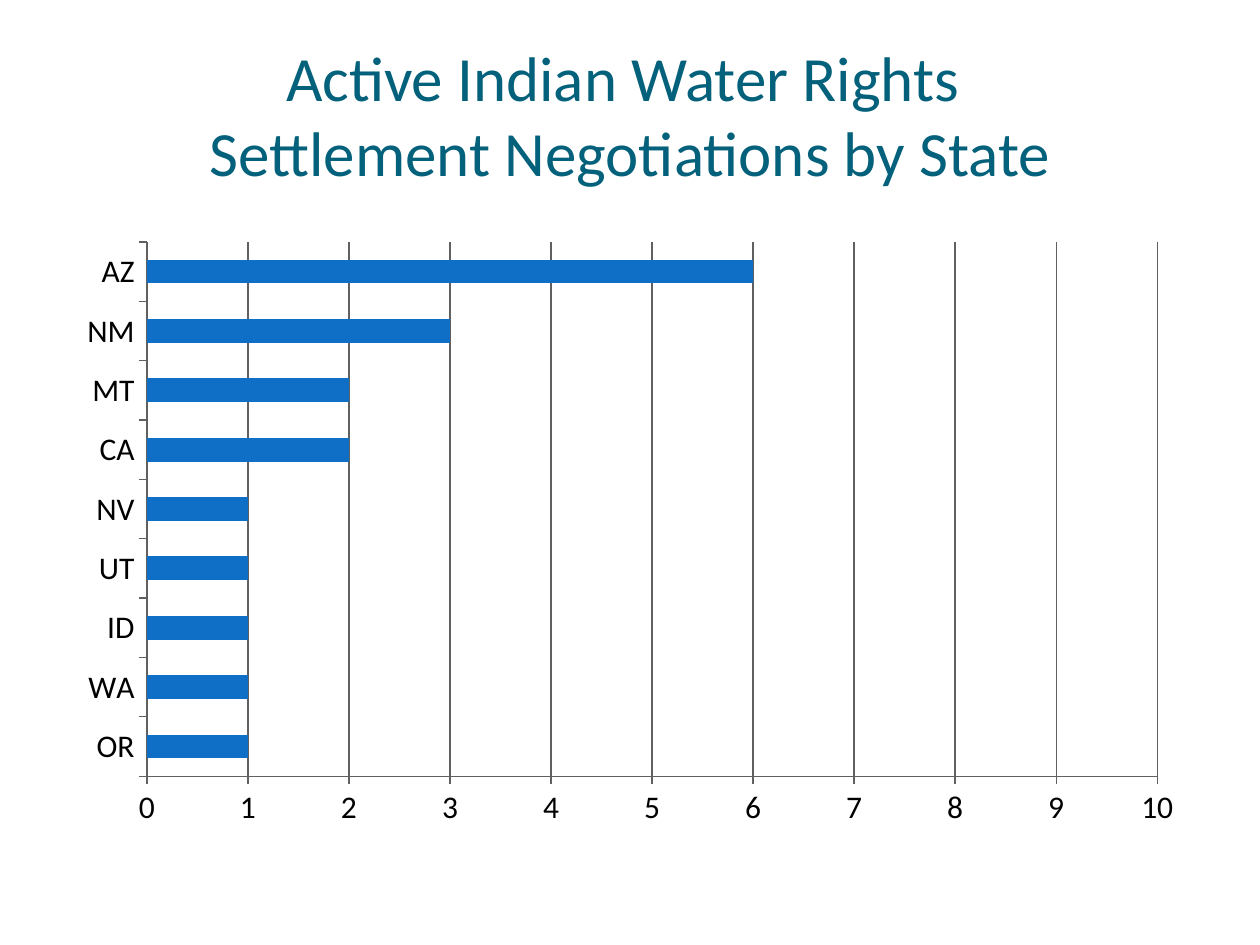
from dataclasses import dataclass

from lxml import etree
from pptx import Presentation
from pptx.chart.data import CategoryChartData
from pptx.dml.color import RGBColor
from pptx.enum.chart import XL_CHART_TYPE, XL_TICK_MARK
from pptx.enum.text import MSO_ANCHOR, MSO_AUTO_SIZE, PP_ALIGN
from pptx.oxml import parse_xml
from pptx.oxml.ns import nsdecls
from pptx.util import Cm, Pt

BARS = XL_CHART_TYPE.BAR_CLUSTERED
OUT, NONE = XL_TICK_MARK.OUTSIDE, XL_TICK_MARK.NONE
BOTTOM = MSO_ANCHOR.BOTTOM
FIXED = MSO_AUTO_SIZE.NONE
CENTER = PP_ALIGN.CENTER

FONT = "Calibri"
COLORS = {"title": "04617B", "bar": "0F6FC6", "text": "000000", "line": "606060"}
PLOT = {"x": 0.074, "y": 0.034, "w": 0.891, "h": 0.857}


@dataclass
class Box:
    left: float
    top: float
    width: float
    height: float

    def lengths(self) -> tuple:
        return Cm(self.left), Cm(self.top), Cm(self.width), Cm(self.height)


@dataclass
class State:
    name: str
    count: int


STATES = [
    State("OR", 1),
    State("WA", 1),
    State("ID", 1),
    State("UT", 1),
    State("NV", 1),
    State("CA", 2),
    State("MT", 2),
    State("NM", 3),
    State("AZ", 6),
]


def color(key: str) -> RGBColor:
    return RGBColor.from_string(COLORS[key])


def style(font, size: float, key: str) -> None:
    font.name = FONT
    font.size = Pt(size)
    font.color.rgb = color(key)


def add_title(slide, box: Box, text: str) -> None:
    title = slide.shapes.title
    title.left, title.top, title.width, title.height = box.lengths()
    frame = title.text_frame
    frame.text = text
    frame.word_wrap = True
    frame.auto_size = FIXED
    frame.vertical_anchor = BOTTOM
    frame.margin_left = frame.margin_right = frame.margin_bottom = 0
    frame.margin_top = Cm(0.13)
    line = frame.paragraphs[0]
    line.alignment = CENTER
    style(line.font, 36, "title")


def style_line(line) -> None:
    line.color.rgb = color("line")
    line.width = Pt(0.75)


def style_axis(axis) -> None:
    axis.major_tick_mark = OUT
    axis.minor_tick_mark = NONE
    style_line(axis.format.line)


def set_plot(chart) -> None:
    area = chart._chartSpace.chart.plotArea
    for old in area.findall("{*}layout"):
        area.remove(old)
    layout = parse_xml(f"<c:layout {nsdecls('c')}><c:manualLayout/></c:layout>")
    tags = {"layoutTarget": "inner", "xMode": "edge", "yMode": "edge", **PLOT}
    space = etree.QName(layout).namespace
    for tag, val in tags.items():
        etree.SubElement(layout[0], f"{{{space}}}{tag}").set("val", str(val))
    area.insert(0, layout)


def add_bars(slide, box: Box, states: list[State]) -> None:
    data = CategoryChartData()
    data.categories = [state.name for state in states]
    data.add_series("Series 1", [state.count for state in states])
    chart = slide.shapes.add_chart(BARS, *box.lengths(), data).chart
    chart.has_legend = False
    chart.has_title = False
    style(chart.font, 18, "text")
    plot = chart.plots[0]
    plot.gap_width = 150
    plot.vary_by_categories = False
    fill = plot.series[0].format.fill
    fill.solid()
    fill.fore_color.rgb = color("bar")
    scale = chart.value_axis
    for axis in (chart.category_axis, scale):
        style_axis(axis)
    scale.minimum_scale, scale.maximum_scale, scale.major_unit = 0, 10, 1
    scale.has_major_gridlines = True
    style_line(scale.major_gridlines.format.line)
    scale.tick_labels.number_format = "#,##0"
    scale.tick_labels.number_format_is_linked = False
    set_plot(chart)


def main() -> None:
    deck = Presentation()
    deck.slide_width, deck.slide_height = Cm(25.4), Cm(19.05)
    slide = deck.slides.add_slide(deck.slide_layouts[5])
    add_title(
        slide,
        Box(1.27, 0.64, 22.86, 3.18),
        "Active Indian Water Rights \vSettlement Negotiations by State",
    )
    add_bars(slide, Box(1.27, 4.45, 22.86, 12.57), STATES)
    deck.save("out.pptx")


if __name__ == "__main__":
    main()
